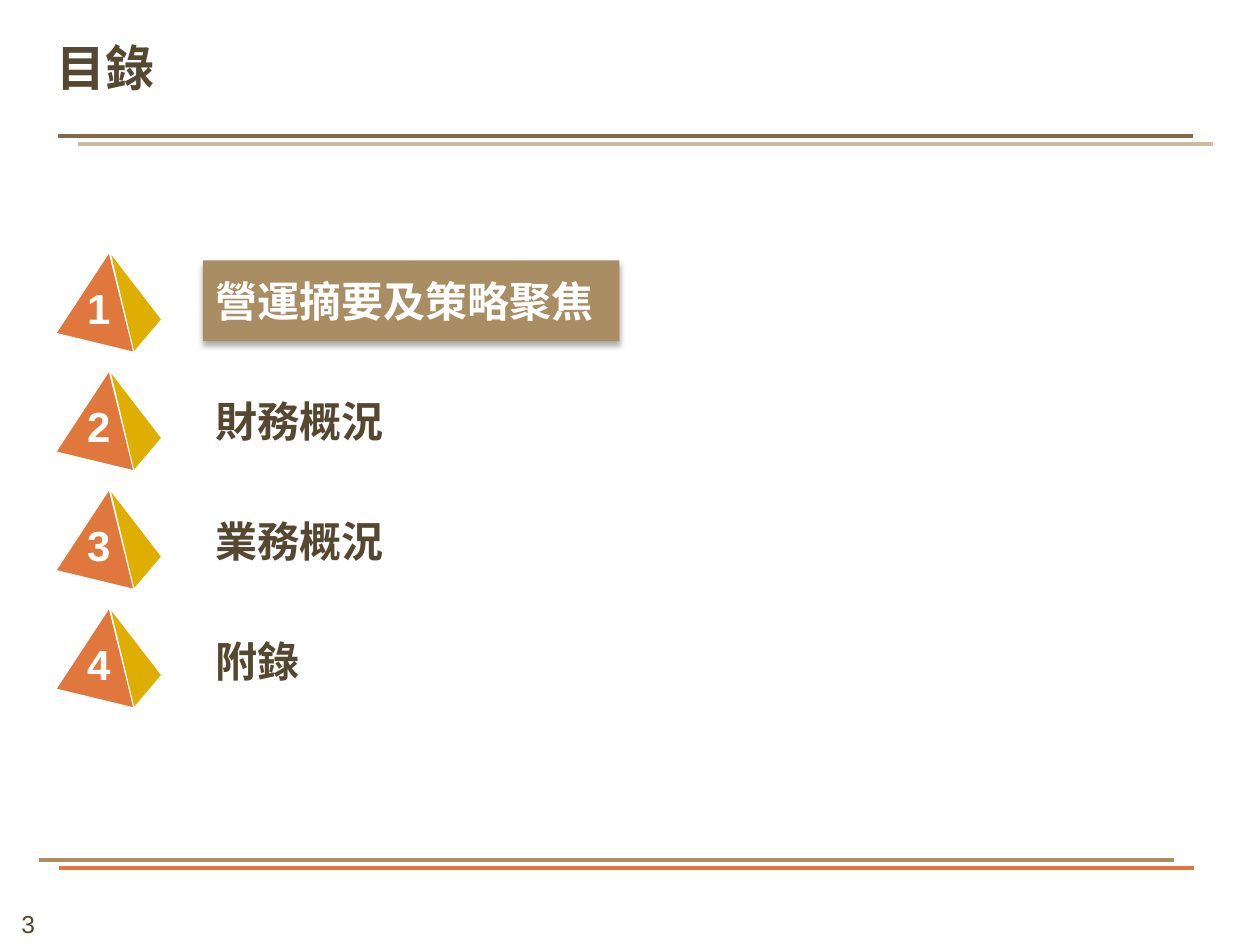
from lxml import etree
from pptx import Presentation, util as u
from pptx.dml.color import RGBColor
from pptx.enum import shapes, text
from pptx.oxml.ns import qn

BROWN, TAN, ORANGE, GOLD, WHITE = "564730", "A98D63", "E0773C", "DEAE00", "FFFFFF"
CHINESE = "Noto Sans CJK SC"
SECTIONS = ["營運摘要及策略聚焦", "財務概況", "業務概況", "附錄"]


def colour(value):
    """Turn a hex string into a colour."""
    return RGBColor.from_string(value)


def write(box, words, size, tint, font="Arial", bold=True, align=text.PP_ALIGN.LEFT,
          anchor=text.MSO_ANCHOR.MIDDLE, inset=0, wrap=True):
    """Put one styled paragraph into a shape and return it."""
    frame = box.text_frame
    frame.word_wrap = wrap
    frame.vertical_anchor = anchor
    frame.margin_left = frame.margin_right = u.Cm(inset)
    frame.margin_top = frame.margin_bottom = u.Cm(inset / 2)
    para = frame.paragraphs[0]
    span = para.add_run()
    span.text = words
    para.alignment = align
    para.font.size, para.font.bold, para.font.name = u.Pt(size), bold, font
    para.font.color.rgb = colour(tint)
    if font == CHINESE:
        etree.SubElement(span.font._element, qn("a:ea"), typeface=font)
    return para


def add_text(holder, left, top, width, height, words, size, tint, **style):
    """Add a text box, sized in centimetres, and return its paragraph."""
    box = holder.shapes.add_textbox(u.Cm(left), u.Cm(top), u.Cm(width), u.Cm(height))
    return write(box, words, size, tint, **style)


def add_rule(page, left, top, width, tint):
    """Draw a horizontal rule."""
    rule = page.shapes.add_connector(shapes.MSO_CONNECTOR.STRAIGHT, u.Cm(left), u.Cm(top),
                                     u.Cm(left + width), u.Cm(top))
    rule.line.color.rgb = colour(tint)
    rule.line.width = u.Pt(2.25)
    etree.SubElement(rule._element.spPr, qn("a:effectLst"))


def add_header(page, left, top, width):
    """Place the title above its pair of offset rules."""
    title = add_text(page, left, top, width, 1.3, "目錄", 28, BROWN, font=CHINESE,
                     anchor=text.MSO_ANCHOR.BOTTOM)
    title.line_spacing = u.Pt(40)
    add_rule(page, left + 0.42, top + 2.27, width, "CBBBA1")
    add_rule(page, left + 0.02, top + 2.11, width, "826A47")


def add_footer(page, left, top, width):
    """Place the pair of offset rules above the page number."""
    add_rule(page, left + 0.39, top + 0.17, width, ORANGE)
    add_rule(page, left, top, width, TAN)
    add_text(page, 0, top + 0.87, 1.14, 0.86, "3", 14, BROWN, bold=False,
             align=text.PP_ALIGN.CENTER)


def add_pyramid(page, left, top, number):
    """Draw a two-faced pyramid with its number."""
    group = page.shapes.add_group_shape()
    faces = [(ORANGE, [(1.07, 0), (0, 1.63), (1.57, 2.01)]),
             (GOLD, [(1.09, 0), (2.13, 1.35), (1.57, 2.01)])]
    for tint, corners in faces:
        points = [(u.Cm(left + x), u.Cm(top + y)) for x, y in corners]
        builder = group.shapes.build_freeform(*points[0])
        builder.add_line_segments(points[1:], close=True)
        face = builder.convert_to_shape()
        face.shadow.inherit = False
        face.fill.solid()
        face.fill.fore_color.rgb = colour(tint)
        face.line.color.rgb = colour(WHITE)
        face.line.width = u.Pt(0.5)
    para = add_text(group, left + 0.62, top + 0.76, 0.48, 0.86, str(number), 24, WHITE,
                    align=text.PP_ALIGN.CENTER, wrap=False)
    para.line_spacing = 0.85


def add_highlight(page, left, top, width, height, words):
    """Place the current section in a shadowed bar."""
    bar = page.shapes.add_shape(shapes.MSO_SHAPE.RECTANGLE, u.Cm(left), u.Cm(top),
                                u.Cm(width), u.Cm(height))
    bar.fill.solid()
    bar.fill.fore_color.rgb = colour(TAN)
    bar.line.fill.background()
    bar.shadow.inherit = False
    effects = bar._element.spPr.find(qn("a:effectLst"))
    shadow = etree.SubElement(effects, qn("a:outerShdw"), blurRad=str(u.Pt(3.5)),
                              dist=str(u.Pt(2.2)), dir="5400000", rotWithShape="0")
    black = etree.SubElement(shadow, qn("a:srgbClr"), val="000000")
    etree.SubElement(black, qn("a:alpha"), val="32000")
    write(bar, words, 24, WHITE, font=CHINESE, inset=0.25)


def add_agenda(page, left, top, current):
    """List the sections beside numbered pyramids, with the current one highlighted."""
    for index, words in enumerate(SECTIONS):
        add_pyramid(page, left, top + 2.39 * index, index + 1)
        label_left, label_top = left + 2.96, top + 0.16 + 2.42 * index
        if index == current:
            add_highlight(page, label_left, label_top, 8.4, 1.63, words)
        else:
            add_text(page, label_left, label_top, 6.15, 1.63, words, 24, BROWN,
                     font=CHINESE, inset=0.25)


def main():
    """Build the contents slide."""
    deck = Presentation()
    deck.slide_width, deck.slide_height = u.Cm(25.4), u.Cm(19.05)
    page = deck.slides.add_slide(deck.slide_layouts[6])
    add_footer(page, 0.79, 17.33, 22.88)
    add_header(page, 1.15, 0.64, 22.88)
    add_agenda(page, 1.13, 5.09, current=0)
    deck.save("out.pptx")


if __name__ == "__main__":
    main()
